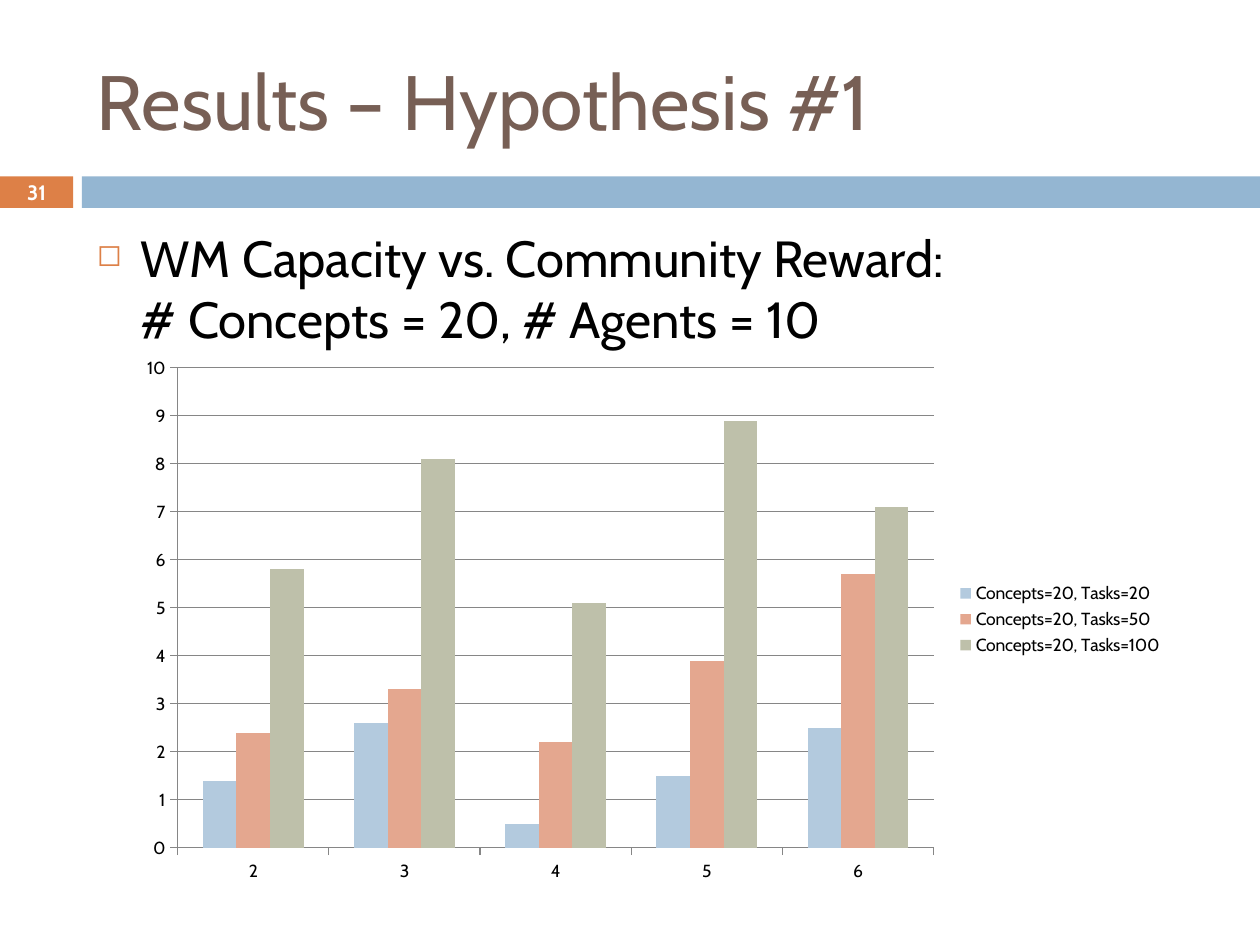
"""Build the slide of results for hypothesis 1 with a clustered column chart."""
from lxml import etree
from pptx import Presentation, util as u
from pptx.chart.data import CategoryChartData
from pptx.dml.color import RGBColor
from pptx.enum import chart as charts, shapes, text
from pptx.oxml import ns

FONT = "Cabin"
ORANGE, BLUE, BROWN, BLACK, WHITE, GRAY = "DD8047", "94B6D2", "775F55", "000000", "FFFFFF", "868686"


def color(value):
    """Turn a hex string into a colour."""
    return RGBColor.from_string(value)


def add_text(box, lines, size, fill, anchor, bold=False):
    """Add a text box with one paragraph of broken lines and return the paragraph."""
    frame = slide.shapes.add_textbox(*map(u.Inches, box)).text_frame
    frame.word_wrap = True
    frame.vertical_anchor = anchor
    paragraph = frame.paragraphs[0]
    for index, line in enumerate(lines):
        if index:
            paragraph.add_line_break()
        run = paragraph.add_run()
        run.text = line
        run.font.name, run.font.size, run.font.bold = FONT, u.Pt(size), bold
        run.font.color.rgb = color(fill)
    return paragraph


presentation = Presentation()
presentation.slide_width, presentation.slide_height = u.Inches(10), u.Inches(7.5)
slide = presentation.slides.add_slide(presentation.slide_layouts[6])

left, width = 0.67, 8.92
tab_width, bar_left, bar_top, bar_height = 0.58, 0.65, 1.4, 0.25

for start, length, fill in ((0, tab_width, ORANGE), (bar_left, 10 - bar_left, BLUE)):
    shape = slide.shapes.add_shape(
        shapes.MSO_SHAPE.RECTANGLE, *map(u.Inches, (start, bar_top, length, bar_height)))
    shape.shadow.inherit = False
    shape.fill.solid()
    shape.fill.fore_color.rgb = color(fill)
    shape.line.fill.background()

middle, top = text.MSO_ANCHOR.MIDDLE, text.MSO_ANCHOR.TOP
add_text((left, 0.25, width, 1.08), ["Results – Hypothesis #1"], 44, BROWN, middle)

number = add_text((0, 1.39, tab_width, 0.27), ["31"], 11.9, WHITE, middle, True)
number.alignment = text.PP_ALIGN.CENTER

body = add_text(
    (left, 1.75, width, 4.92),
    ["WM Capacity vs. Community Reward: ", "# Concepts = 20, # Agents = 10"], 29, BLACK, top)
body.space_before = u.Pt(7)
properties = body._p.get_or_add_pPr()
properties.set("marL", str(u.Inches(0.35)))
properties.set("indent", str(-u.Inches(0.35)))
bullet_color = etree.SubElement(properties, ns.qn("a:buClr"))
etree.SubElement(bullet_color, ns.qn("a:srgbClr"), val=ORANGE)
etree.SubElement(properties, ns.qn("a:buSzPct"), val="60000")
etree.SubElement(properties, ns.qn("a:buChar"), char="◻")

series_table = (
    ("Concepts=20, Tasks=20", (1.4, 2.6, 0.5, 1.5, 2.5), "B3CADE"),
    ("Concepts=20, Tasks=50", (2.4, 3.3, 2.2, 3.9, 5.7), "E4A78F"),
    ("Concepts=20, Tasks=100", (5.8, 8.1, 5.1, 8.9, 7.1), "BEC0AA"),
)
data = CategoryChartData()
data.categories = ["2", "3", "4", "5", "6"]
for name, values, fill in series_table:
    data.add_series(name, values)

chart = slide.shapes.add_chart(
    charts.XL_CHART_TYPE.COLUMN_CLUSTERED, *map(u.Inches, (1, 2.75, 8.33, 4.33)), data).chart
chart.has_title = False
chart.font.name, chart.font.size = FONT, u.Pt(10)
chart.font.color.rgb = color(BLACK)
chart.has_legend = True
chart.legend.position = charts.XL_LEGEND_POSITION.RIGHT
chart.legend.include_in_layout = False

plot = chart.plots[0]
plot.gap_width, plot.overlap, plot.vary_by_categories = 150, 0, False
for series, (name, values, fill) in zip(plot.series, series_table):
    series.format.fill.solid()
    series.format.fill.fore_color.rgb = color(fill)

value_axis, category_axis = chart.value_axis, chart.category_axis
value_axis.minimum_scale, value_axis.maximum_scale, value_axis.major_unit = 0, 10, 1
value_axis.has_major_gridlines = True
for axis in (value_axis, category_axis):
    axis.major_tick_mark = charts.XL_TICK_MARK.OUTSIDE
for part in (value_axis, category_axis, value_axis.major_gridlines):
    part.format.line.color.rgb = color(GRAY)
    part.format.line.width = u.Pt(0.75)

presentation.save("out.pptx")
